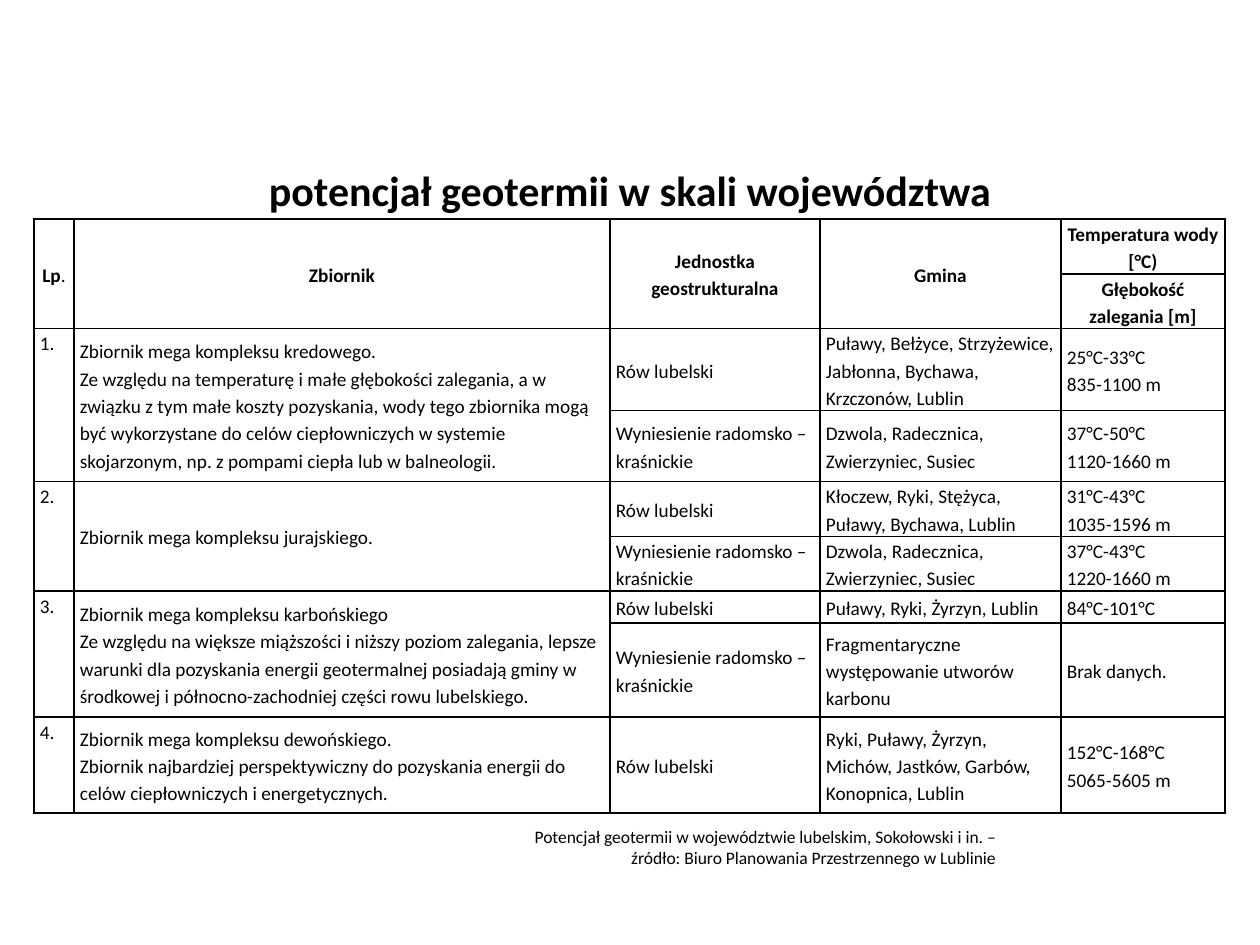
from dataclasses import dataclass

from lxml import etree
from pptx import Presentation
from pptx.dml.color import RGBColor
from pptx.enum.text import MSO_ANCHOR, PP_ALIGN
from pptx.oxml.ns import qn
from pptx.util import Emu, Pt

LEFT, CENTER, RIGHT = PP_ALIGN.LEFT, PP_ALIGN.CENTER, PP_ALIGN.RIGHT
TOP, MIDDLE = MSO_ANCHOR.TOP, MSO_ANCHOR.MIDDLE
EMU_PER_PX = 914400 / 126
BORDER_SIDES = ("a:lnL", "a:lnR", "a:lnT", "a:lnB")


@dataclass(frozen=True)
class Theme:
    font: str = "Calibri"
    ink: str = "000000"
    title: int = 24
    table: int = 11
    source: int = 10
    border: int = 1
    line_spacing: float = 1.15


@dataclass(frozen=True)
class Unit:
    """One geostructural unit of a reservoir: a single table row."""
    name: str
    communes: str
    water: tuple[str, ...]
    height: int


@dataclass(frozen=True)
class Reservoir:
    description: tuple[str, ...]
    units: tuple[Unit, ...]


THEME = Theme()
TROUGH = "Rów lubelski"
UPLIFT = "Wyniesienie radomsko – kraśnickie"
SOUTHERN = "Dzwola, Radecznica, Zwierzyniec, Susiec"

COLUMN_WIDTHS = (40, 536, 210, 241, 164)
HEADER_HEIGHTS = (55, 54)
HEADERS = ("Zbiornik", "Jednostka geostrukturalna", "Gmina")
WATER_HEADERS = ("Temperatura wody [°C)", "Głębokość zalegania [m]")
RESERVOIRS = (
    Reservoir(
        ("Zbiornik mega kompleksu kredowego.",
         "Ze względu na temperaturę i małe głębokości zalegania, a w związku z tym "
         "małe koszty pozyskania, wody tego zbiornika mogą być wykorzystane do celów "
         "ciepłowniczych w systemie skojarzonym, np. z pompami ciepła lub w balneologii."),
        (Unit(TROUGH, "Puławy, Bełżyce, Strzyżewice, Jabłonna, Bychawa, Krzczonów, Lublin",
              ("25°C-33°C", "835-1100 m"), 82),
         Unit(UPLIFT, SOUTHERN, ("37°C-50°C", "1120-1660 m"), 71))),
    Reservoir(
        ("Zbiornik mega kompleksu jurajskiego.",),
        (Unit(TROUGH, "Kłoczew, Ryki, Stężyca, Puławy, Bychawa, Lublin",
              ("31°C-43°C", "1035-1596 m"), 55),
         Unit(UPLIFT, SOUTHERN, ("37°C-43°C", "1220-1660 m"), 54))),
    Reservoir(
        ("Zbiornik mega kompleksu karbońskiego",
         "Ze względu na większe miąższości i niższy poziom zalegania, lepsze warunki "
         "dla pozyskania energii geotermalnej posiadają gminy w środkowej i "
         "północno-zachodniej części rowu lubelskiego."),
        (Unit(TROUGH, "Puławy, Ryki, Żyrzyn, Lublin", ("84°C-101°C",), 32),
         Unit(UPLIFT, "Fragmentaryczne występowanie utworów karbonu",
              ("Brak danych.",), 94))),
    Reservoir(
        ("Zbiornik mega kompleksu dewońskiego.",
         "Zbiornik najbardziej perspektywiczny do pozyskania energii do celów "
         "ciepłowniczych i energetycznych."),
        (Unit(TROUGH, "Ryki, Puławy, Żyrzyn, Michów, Jastków, Garbów, Konopnica, Lublin",
              ("152°C-168°C", "5065-5605 m"), 96),)),
)


def px(length: int) -> Emu:
    return Emu(round(length * EMU_PER_PX))


def place(shape, left: int, top: int, width: int, height: int) -> None:
    shape.left, shape.top = px(left), px(top)
    shape.width, shape.height = px(width), px(height)


def add_span(para, text: str, size: int, bold: bool = False) -> None:
    span = para.add_run()
    span.text = text
    span.font.name = THEME.font
    span.font.size = Pt(size)
    span.font.bold = bold
    span.font.color.rgb = RGBColor.from_string(THEME.ink)


def fill_cell(cell, *lines: str, bold: bool = False, align=LEFT, anchor=MIDDLE) -> None:
    """Write one paragraph per line into a table cell."""
    cell.vertical_anchor = anchor
    frame = cell.text_frame
    for index, line in enumerate(lines):
        para = frame.add_paragraph() if index else frame.paragraphs[0]
        para.alignment = align
        para.line_spacing = THEME.line_spacing
        add_span(para, line, THEME.table, bold)


def style_cell(cell) -> None:
    """Set the margins, solid borders and empty fill of a cell."""
    cell.margin_left = cell.margin_right = px(6)
    cell.margin_top = cell.margin_bottom = 0
    properties = cell._tc.get_or_add_tcPr()
    for side in BORDER_SIDES:
        line = etree.SubElement(properties, qn(side), w=str(Pt(THEME.border)))
        fill = etree.SubElement(line, qn("a:solidFill"))
        etree.SubElement(fill, qn("a:srgbClr"), val=THEME.ink)
    cell.fill.background()


def write_header(table) -> None:
    for column in range(len(HEADERS) + 1):
        table.cell(0, column).merge(table.cell(1, column))
    fill_cell(table.cell(0, 0), "Lp", bold=True, align=CENTER)
    add_span(table.cell(0, 0).text_frame.paragraphs[0], ".", THEME.table)
    for column, header in enumerate(HEADERS, 1):
        fill_cell(table.cell(0, column), header, bold=True, align=CENTER)
    for row, header in enumerate(WATER_HEADERS):
        fill_cell(table.cell(row, 4), header, bold=True, align=CENTER)


def write_reservoir(table, row: int, number: int, reservoir: Reservoir) -> None:
    last = row + len(reservoir.units) - 1
    if last > row:
        for column in (0, 1):
            table.cell(row, column).merge(table.cell(last, column))
    fill_cell(table.cell(row, 0), f"{number}.", anchor=TOP)
    fill_cell(table.cell(row, 1), *reservoir.description)
    for unit_row, unit in enumerate(reservoir.units, row):
        fill_cell(table.cell(unit_row, 2), unit.name)
        fill_cell(table.cell(unit_row, 3), unit.communes)
        fill_cell(table.cell(unit_row, 4), *unit.water)


def add_reservoir_table(page) -> None:
    heights = HEADER_HEIGHTS + tuple(
        unit.height for reservoir in RESERVOIRS for unit in reservoir.units)
    table = page.shapes.add_table(
        len(heights), len(COLUMN_WIDTHS), px(34), px(219),
        px(sum(COLUMN_WIDTHS)), px(sum(heights))).table
    table.first_row = table.horz_banding = False
    for column, width in zip(table.columns, COLUMN_WIDTHS):
        column.width = px(width)
    for row, height in zip(table.rows, heights):
        row.height = px(height)
    for cell in table.iter_cells():
        style_cell(cell)
    write_header(table)
    row = len(HEADER_HEIGHTS)
    for number, reservoir in enumerate(RESERVOIRS, 1):
        write_reservoir(table, row, number, reservoir)
        row += len(reservoir.units)


def add_title(page) -> None:
    title = page.shapes.title
    place(title, 0, 145, 1260, 89)
    title.text_frame.vertical_anchor = MIDDLE
    para = title.text_frame.paragraphs[0]
    para.alignment = CENTER
    add_span(para, "potencjał geotermii w skali województwa", THEME.title, bold=True)


def add_source(page) -> None:
    box = page.shapes.add_textbox(px(481), px(820), px(527), px(55))
    box.text_frame.word_wrap = True
    para = box.text_frame.paragraphs[0]
    para.alignment = RIGHT
    add_span(para, "Potencjał geotermii w województwie lubelskim, Sokołowski i in. – "
             "źródło: Biuro Planowania Przestrzennego w Lublinie", THEME.source)


def main() -> None:
    deck = Presentation()
    deck.slide_width, deck.slide_height = px(1260), px(945)
    page = deck.slides.add_slide(deck.slide_layouts[5])
    add_title(page)
    add_reservoir_table(page)
    add_source(page)
    deck.save("out.pptx")


if __name__ == "__main__":
    main()
